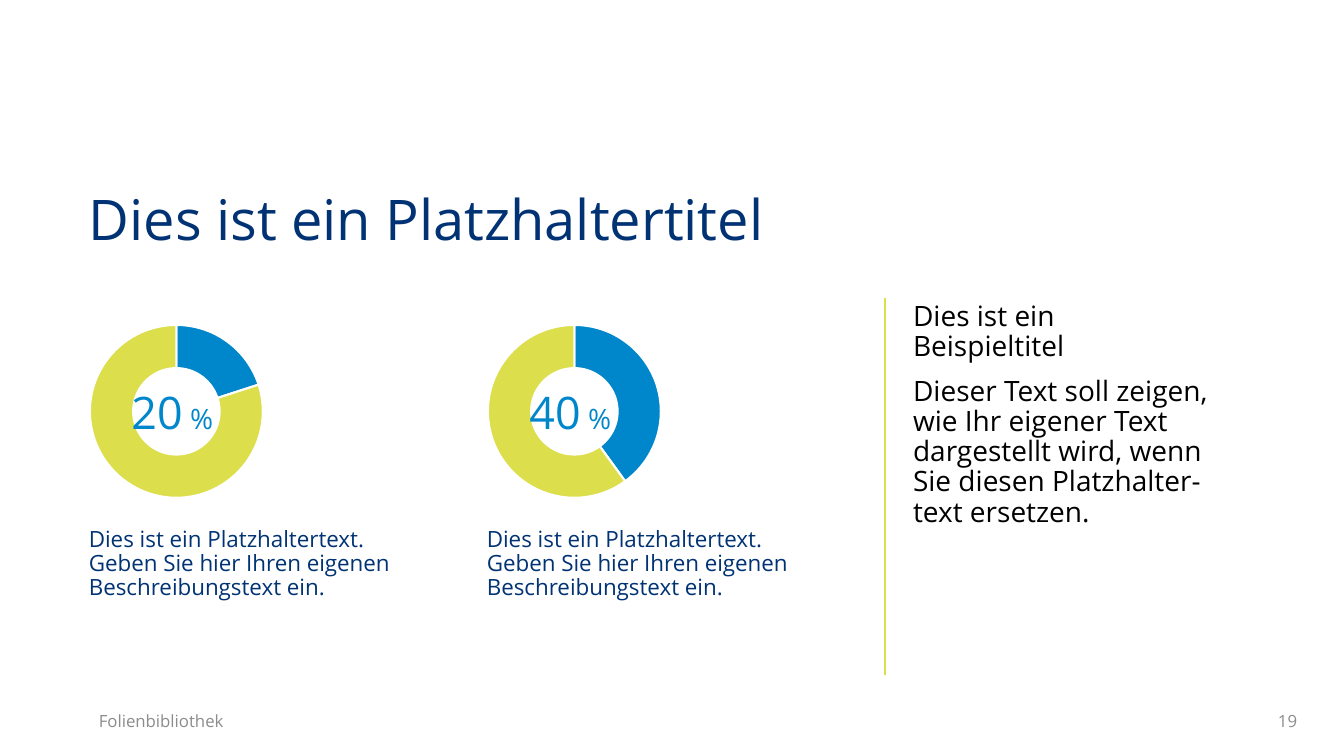
from dataclasses import dataclass

from lxml import etree
from pptx import Presentation
from pptx.chart.data import CategoryChartData
from pptx.dml.color import RGBColor
from pptx.enum.chart import XL_CHART_TYPE
from pptx.enum.shapes import MSO_CONNECTOR
from pptx.enum.text import MSO_ANCHOR, PP_ALIGN
from pptx.oxml import parse_xml
from pptx.oxml.ns import nsdecls, qn
from pptx.slide import Slide
from pptx.text.text import Font
from pptx.util import Cm, Pt

DOUGHNUT = XL_CHART_TYPE.DOUGHNUT
STRAIGHT = MSO_CONNECTOR.STRAIGHT
TOP, MIDDLE = MSO_ANCHOR.TOP, MSO_ANCHOR.MIDDLE
LEFT, CENTER, RIGHT = PP_ALIGN.LEFT, PP_ALIGN.CENTER, PP_ALIGN.RIGHT


@dataclass(frozen=True)
class Theme:
    font: str = "Open Sans"
    navy: str = "013374"
    blue: str = "0087CB"
    lime: str = "DCDF4B"
    gray: str = "8C8C8C"
    black: str = "000000"
    white: str = "FFFFFF"
    title_size: float = 40
    number_size: float = 32
    body_size: float = 20
    caption_size: float = 16
    footer_size: float = 12
    chart_size: float = 10


@dataclass(frozen=True)
class Box:
    left: float
    top: float
    width: float
    height: float


@dataclass(frozen=True)
class TextBlock:
    box: Box
    paragraphs: tuple[str, ...]
    size: float
    color: str
    align: PP_ALIGN = LEFT
    anchor: MSO_ANCHOR = TOP
    line_spacing: float = 0.9
    margins: tuple[float, float, float, float] = (0, 0, 0, 0)


THEME = Theme()
MARGIN_LEFT = 2.24
COLUMN_PITCH = 10.03
COLUMN_WIDTH = 9.22
CONTENT_TOP = 7.62
CONTENT_HEIGHT = 9.45
CAPTION_OFFSET = 5.69
FOOTER_TOP = 17.65
FOOTER_HEIGHT = 1.02
FOOTER_MARGINS = (0.25, 0.13, 0.25, 0.13)
COLUMN_LEFTS = [MARGIN_LEFT + COLUMN_PITCH * column for column in range(3)]
PERCENTAGES = (20, 40)
CAPTION = "Dies ist ein Platzhaltertext.\vGeben Sie hier Ihren eigenen Beschreibungstext ein."

TEXT_BLOCKS = [
    TextBlock(Box(MARGIN_LEFT, 4.83, 29.31, 2.29), ("Dies ist ein Platzhaltertitel",),
              THEME.title_size, THEME.navy),
    TextBlock(Box(COLUMN_LEFTS[2], CONTENT_TOP, COLUMN_WIDTH, CONTENT_HEIGHT),
              ("Dies ist ein\vBeispieltitel",
               "Dieser Text soll zeigen,\vwie Ihr eigener Text\vdargestellt wird, wenn\v"
               "Sie diesen Platzhalter-\vtext ersetzen."),
              THEME.body_size, THEME.black, margins=(0.71, 0, 0, 0)),
    TextBlock(Box(MARGIN_LEFT, FOOTER_TOP, 20.42, FOOTER_HEIGHT), ("Folienbibliothek",),
              THEME.footer_size, THEME.gray, LEFT, MIDDLE, 1.0, FOOTER_MARGINS),
    TextBlock(Box(25.32, FOOTER_TOP, 7.62, FOOTER_HEIGHT), ("19",),
              THEME.footer_size, THEME.gray, RIGHT, MIDDLE, 1.0, FOOTER_MARGINS),
]


def style_font(font: Font, size: float, color: str) -> None:
    font.name = THEME.font
    font.size = Pt(size)
    font.color.rgb = RGBColor.from_string(color)


def add_text(slide: Slide, block: TextBlock) -> None:
    box = block.box
    shape = slide.shapes.add_textbox(Cm(box.left), Cm(box.top), Cm(box.width), Cm(box.height))
    frame = shape.text_frame
    frame.word_wrap = True
    frame.vertical_anchor = block.anchor
    (frame.margin_left, frame.margin_top,
     frame.margin_right, frame.margin_bottom) = map(Cm, block.margins)
    for index, text in enumerate(block.paragraphs):
        paragraph = frame.add_paragraph() if index else frame.paragraphs[0]
        paragraph.text = text
        paragraph.alignment = block.align
        paragraph.line_spacing = block.line_spacing
        if index:
            paragraph.space_before = Pt(10)
        style_font(paragraph.font, block.size, block.color)


def add_doughnut(slide: Slide, left: float, percentage: int) -> None:
    data = CategoryChartData()
    data.categories = ["1", "2"]
    data.add_series("Series 1", (percentage, 100 - percentage))
    chart = slide.shapes.add_chart(
        DOUGHNUT, Cm(left), Cm(CONTENT_TOP), Cm(COLUMN_WIDTH), Cm(4.95), data).chart
    chart.has_legend = False
    chart.has_title = False
    style_font(chart.font, THEME.chart_size, THEME.black)
    plot = chart.plots[0]
    plot.vary_by_categories = True
    for index, color in enumerate((THEME.blue, THEME.lime)):
        point_format = plot.series[0].points[index].format
        point_format.fill.solid()
        point_format.fill.fore_color.rgb = RGBColor.from_string(color)
        point_format.line.color.rgb = RGBColor.from_string(THEME.white)
        point_format.line.width = Pt(1.5)
    plot_area = chart.element.find(".//" + qn("c:plotArea"))
    plot_area.find(".//" + qn("c:holeSize")).set("val", "75")
    for layout in plot_area.findall(qn("c:layout")):
        plot_area.remove(layout)
    plot_area.insert(0, parse_xml(
        f'<c:layout {nsdecls("c")}><c:manualLayout><c:layoutTarget val="inner"/>'
        '<c:xMode val="edge"/><c:yMode val="edge"/><c:x val="0"/><c:y val="0.114"/>'
        '<c:w val="0.474"/><c:h val="0.886"/></c:manualLayout></c:layout>'))


def add_percentage(slide: Slide, left: float, percentage: int) -> None:
    shape = slide.shapes.add_textbox(Cm(left), Cm(9.7), Cm(4.39), Cm(1.37))
    frame = shape.text_frame
    frame.word_wrap = True
    frame.margin_left = frame.margin_top = frame.margin_right = frame.margin_bottom = 0
    paragraph = frame.paragraphs[0]
    paragraph.alignment = CENTER
    for text, size in ((str(percentage), THEME.number_size), (" % ", THEME.body_size)):
        run = paragraph.add_run()
        run.text = text
        style_font(run.font, size, THEME.blue)


def add_divider(slide: Slide, left: float, top: float, bottom: float) -> None:
    divider = slide.shapes.add_connector(STRAIGHT, Cm(left), Cm(bottom), Cm(left), Cm(top))
    divider.line.color.rgb = RGBColor.from_string(THEME.lime)
    divider.line.width = Pt(1)
    etree.SubElement(divider.element.spPr, qn("a:effectLst"))


def main() -> None:
    presentation = Presentation()
    presentation.slide_width = Cm(33.87)
    presentation.slide_height = Cm(19.05)
    slide = presentation.slides.add_slide(presentation.slide_layouts[6])
    for block in TEXT_BLOCKS:
        add_text(slide, block)
    for left, percentage in zip(COLUMN_LEFTS, PERCENTAGES):
        caption_box = Box(left, CONTENT_TOP + CAPTION_OFFSET, COLUMN_WIDTH,
                          CONTENT_HEIGHT - CAPTION_OFFSET)
        add_text(slide, TextBlock(caption_box, (CAPTION,), THEME.caption_size, THEME.navy))
        add_doughnut(slide, left, percentage)
        add_percentage(slide, left, percentage)
    add_divider(slide, COLUMN_LEFTS[2], 7.52, 17.02)
    presentation.save("out.pptx")


if __name__ == "__main__":
    main()
